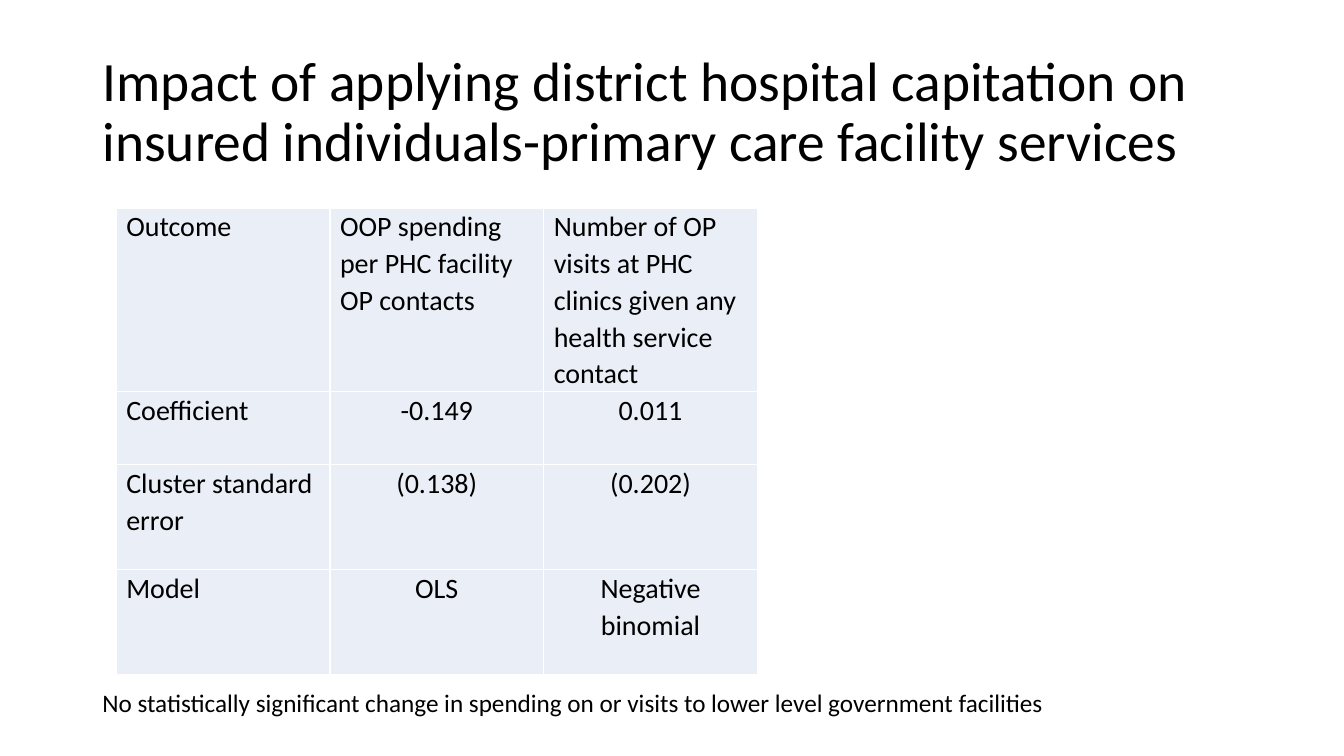
from lxml.etree import SubElement
from pptx import Presentation
from pptx.dml.color import RGBColor
from pptx.enum.text import MSO_ANCHOR as ANCHOR, MSO_AUTO_SIZE as FIT, PP_ALIGN as ALIGN
from pptx.oxml.ns import qn
from pptx.util import Pt


def rgb(value):
    return RGBColor.from_string(value)


def write(tf, text, size, align=ALIGN.LEFT, spacing=1.0):
    p = tf.paragraphs[0]
    p.alignment, p.line_spacing = align, spacing
    r = p.add_run()
    r.text = text
    for name, value in {"name": "Calibri", "size": Pt(size), "bold": False}.items():
        setattr(r.font, name, value)
    r.font.color.rgb = rgb("000000")


prs = Presentation()
prs.slide_width, prs.slide_height = Pt(960), Pt(540)
s = prs.slides.add_slide(prs.slide_layouts[5])

# Title
title = s.shapes.title
box = {"left": 66, "top": 28.75, "width": 828, "height": 104.4}
for name, value in box.items():
    setattr(title, name, Pt(value))
tf = title.text_frame
tf.word_wrap, tf.auto_size, tf.vertical_anchor = True, FIT.NONE, ANCHOR.MIDDLE
write(tf, "Impact of applying district hospital capitation on insured "
      "individuals-primary care facility services", 39.6, spacing=0.9)

# Results table
rows = [
    ("Outcome", "OOP spending per PHC facility OP contacts",
     "Number of OP visits at PHC clinics given any health service contact"),
    ("Coefficient", "-0.149", "0.011"),
    ("Cluster standard error", "(0.138)", "(0.202)"),
    ("Model", "OLS", "Negative binomial"),
]
heights = [130.6, 52.2, 75, 75]
col_width = 152.7
table = s.shapes.add_table(len(rows), 3, Pt(83), Pt(148.5),
                           Pt(3 * col_width), Pt(sum(heights))).table
for col in table.columns:
    col.width = Pt(col_width)
margins = {"margin_left": 7.2, "margin_right": 7.2, "margin_top": 0, "margin_bottom": 0}
for i, (row, height) in enumerate(zip(rows, heights)):
    table.rows[i].height = Pt(height)
    for j, text in enumerate(row):
        cell = table.cell(i, j)
        for name, value in margins.items():
            setattr(cell, name, Pt(value))
        align = ALIGN.CENTER if i and j else ALIGN.LEFT
        write(cell.text_frame, text, 20, align, 1.07)
        # Borders come before the fill in the cell properties
        tc_pr = cell._tc.get_or_add_tcPr()
        for side in ("lnL", "lnR", "lnT", "lnB"):
            ln = SubElement(tc_pr, qn(f"a:{side}"), w=str(Pt(1)))
            SubElement(SubElement(ln, qn("a:solidFill")), qn("a:srgbClr"), val="FFFFFF")
        cell.fill.solid()
        cell.fill.fore_color.rgb = rgb("EAEFF7")

# Conclusion
tf = s.shapes.add_textbox(Pt(66), Pt(487.5), Pt(835), Pt(29)).text_frame
tf.word_wrap, tf.auto_size = True, FIT.SHAPE_TO_FIT_TEXT
write(tf, "No statistically significant change in spending on or visits to "
      "lower level government facilities", 18)

prs.save("out.pptx")
